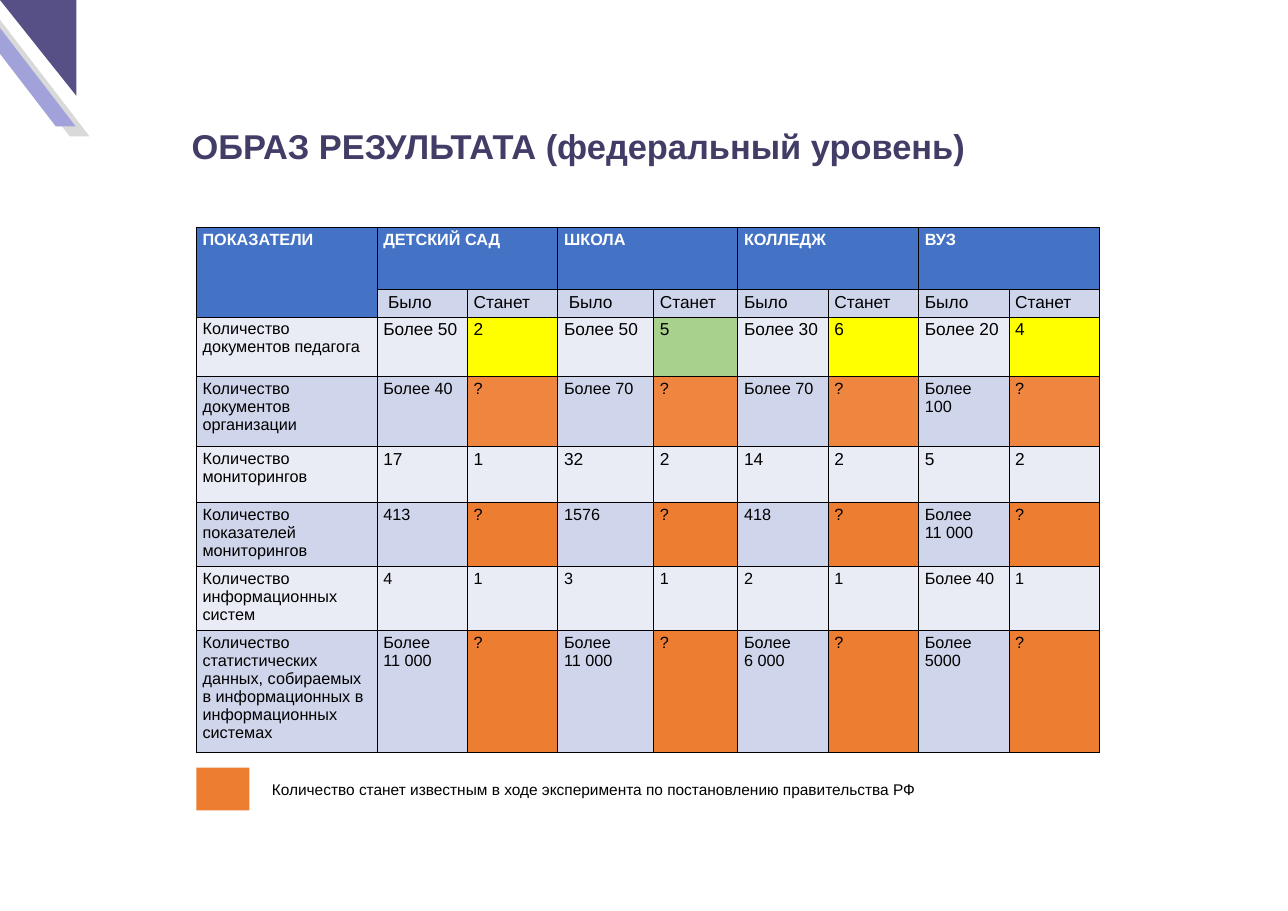
from lxml import etree
from pptx import Presentation
from pptx import util as u
from pptx.dml.color import RGBColor
from pptx.enum import shapes, text
from pptx.oxml.ns import qn

PX = 9144  # 100 px to the inch
COLORS = {
    "title": "423D67", "violet": "565087", "lilac": "A2A2DA", "gray": "D9D9D9",
    "black": "000000", "white": "FFFFFF", "header": "4472C4",
    "dark band": "CFD5EA", "light band": "E9EBF5", "yellow": "FFFF00",
    "green": "A9D18E", "orange": "ED7D31", "soft orange": "EE8640",
}
LEVELS = ["ДЕТСКИЙ САД", "ШКОЛА", "КОЛЛЕДЖ", "ВУЗ"]
STAGES = [" Было", "Станет"] * 2 + ["Было", "Станет"] * 2
# Label, value size, values, fills of the "Станет" cells (None: the row band)
INDICATORS = [
    ("Количество документов педагога", 16,
     ["Более 50", "2", "Более 50", "5", "Более 30", "6", "Более 20", "4"],
     ["yellow", "green", "yellow", "yellow"]),
    ("Количество документов организации", 15,
     ["Более 40", "?", "Более 70", "?", "Более 70", "?", "Более 100", "?"],
     ["soft orange"] * 4),
    ("Количество мониторингов", 16,
     ["17", "1", "32", "2", "14", "2", "5", "2"], [None] * 4),
    ("Количество показателей мониторингов", 15,
     ["413", "?", "1576", "?", "418", "?", "Более\n11 000", "?"], ["orange"] * 4),
    ("Количество информационных систем", 15,
     ["4", "1", "3", "1", "2", "1", "Более 40", "1"], [None] * 4),
    ("Количество статистических данных, собираемых в информационных "
     "в информационных системах", 15,
     ["Более\n11 000", "?", "Более\n11 000", "?", "Более\n6 000", "?",
      "Более 5000", "?"], ["orange"] * 4),
]
COLUMN_WIDTHS = [232, 116, 116, 123, 108, 116, 116, 116, 116]
ROW_HEIGHTS = [80, 35, 76, 90, 72, 82, 82, 157]


def rgb(name):
    return RGBColor.from_string(COLORS[name])


def emu(*lengths):
    return [u.Emu(length * PX) for length in lengths]


def write(frame, words, size=15, color="black", bold=False):
    frame.word_wrap = True
    frame.text = words
    for para in frame.paragraphs:
        para.alignment = text.PP_ALIGN.LEFT
        for span in para.runs:
            span.font.name = "Arial"
            span.font.size = u.Pt(size)
            span.font.bold = bold
            span.font.color.rgb = rgb(color)


def add_block(page, kind, box, color):
    shape = page.shapes.add_shape(kind, *emu(*box))
    shape.shadow.inherit = False
    shape.fill.solid()
    shape.fill.fore_color.rgb = rgb(color)
    shape.line.fill.background()
    return shape


def add_corner(page, box):
    """Slanted bands and a triangle in the corner of the page."""
    left, top, width, height = box
    for shift, drop, color in [(-35, 13, "gray"), (-53, 0, "lilac")]:
        band = add_block(page, shapes.MSO_SHAPE.PARALLELOGRAM,
                         (left + shift, top + drop, 150, 162), color)
        band.adjustments[0] = 0.83
        band._element.spPr.xfrm.set("flipH", "1")
    triangle = add_block(page, shapes.MSO_SHAPE.RIGHT_TRIANGLE,
                         (left, top, width, height), "violet")
    triangle.rotation = 180


def add_title(page, box):
    title = page.shapes.title
    title.left, title.top, title.width, title.height = emu(*box)
    title.text_frame.vertical_anchor = text.MSO_ANCHOR.MIDDLE
    title.text_frame.auto_size = text.MSO_AUTO_SIZE.NONE
    write(title.text_frame, "ОБРАЗ РЕЗУЛЬТАТА (федеральный уровень)",
          size=31.8, color="title", bold=True)


def fill_cell(cell, words, fill, **style):
    cell.margin_left, cell.margin_right = emu(8, 8)
    cell.margin_top, cell.margin_bottom = emu(4, 4)
    write(cell.text_frame, words, **style)
    properties = cell._tc.get_or_add_tcPr()
    for side in ("a:lnL", "a:lnR", "a:lnT", "a:lnB"):
        border = etree.SubElement(properties, qn(side), w=str(u.Pt(1)))
        paint = etree.SubElement(border, qn("a:solidFill"))
        etree.SubElement(paint, qn("a:srgbClr"), val=COLORS["black"])
    cell.fill.solid()
    cell.fill.fore_color.rgb = rgb(fill)


def add_indicator_table(page, box):
    table = page.shapes.add_table(len(ROW_HEIGHTS), len(COLUMN_WIDTHS), *emu(*box)).table
    table.first_row = table.horz_banding = False
    for column, width in zip(table.columns, emu(*COLUMN_WIDTHS)):
        column.width = width
    for row, height in zip(table.rows, emu(*ROW_HEIGHTS)):
        row.height = height

    # Two header rows
    headings = ["ПОКАЗАТЕЛИ"] + [words for level in LEVELS for words in (level, "")]
    for column, words in enumerate(headings):
        fill_cell(table.cell(0, column), words, "header", color="white", bold=True)
    fill_cell(table.cell(1, 0), "", "header")
    for column, words in enumerate(STAGES, 1):
        fill_cell(table.cell(1, column), words, "dark band", size=16)
    table.cell(0, 0).merge(table.cell(1, 0))
    for column in range(1, len(headings), 2):
        table.cell(0, column).merge(table.cell(0, column + 1))

    # Indicator rows
    for row, (label, size, values, marks) in enumerate(INDICATORS, 2):
        band = "dark band" if row % 2 else "light band"
        fill_cell(table.cell(row, 0), label, band)
        for index, words in enumerate(values):
            mark = marks[index // 2] if index % 2 else None
            fill_cell(table.cell(row, index + 1), words, mark or band, size=size)


def add_legend(page, box):
    left, top, width, height = box
    add_block(page, shapes.MSO_SHAPE.RECTANGLE, (left, top, 68, height), "orange")
    note = page.shapes.add_textbox(*emu(left + 87, top + 11, width - 87, 34))
    write(note.text_frame, "Количество станет известным в ходе эксперимента "
          "по постановлению правительства РФ", size=14.3)


def main():
    deck = Presentation()
    deck.slide_width, deck.slide_height = emu(1653, 1169)
    page = deck.slides.add_slide(deck.slide_layouts[5])
    add_corner(page, (0, 0, 98, 123))
    add_title(page, (236, 155, 1175, 64))
    add_indicator_table(page, (252, 292, sum(COLUMN_WIDTHS), sum(ROW_HEIGHTS)))
    add_legend(page, (252, 985, 1179, 55))
    deck.save("out.pptx")


if __name__ == "__main__":
    main()
